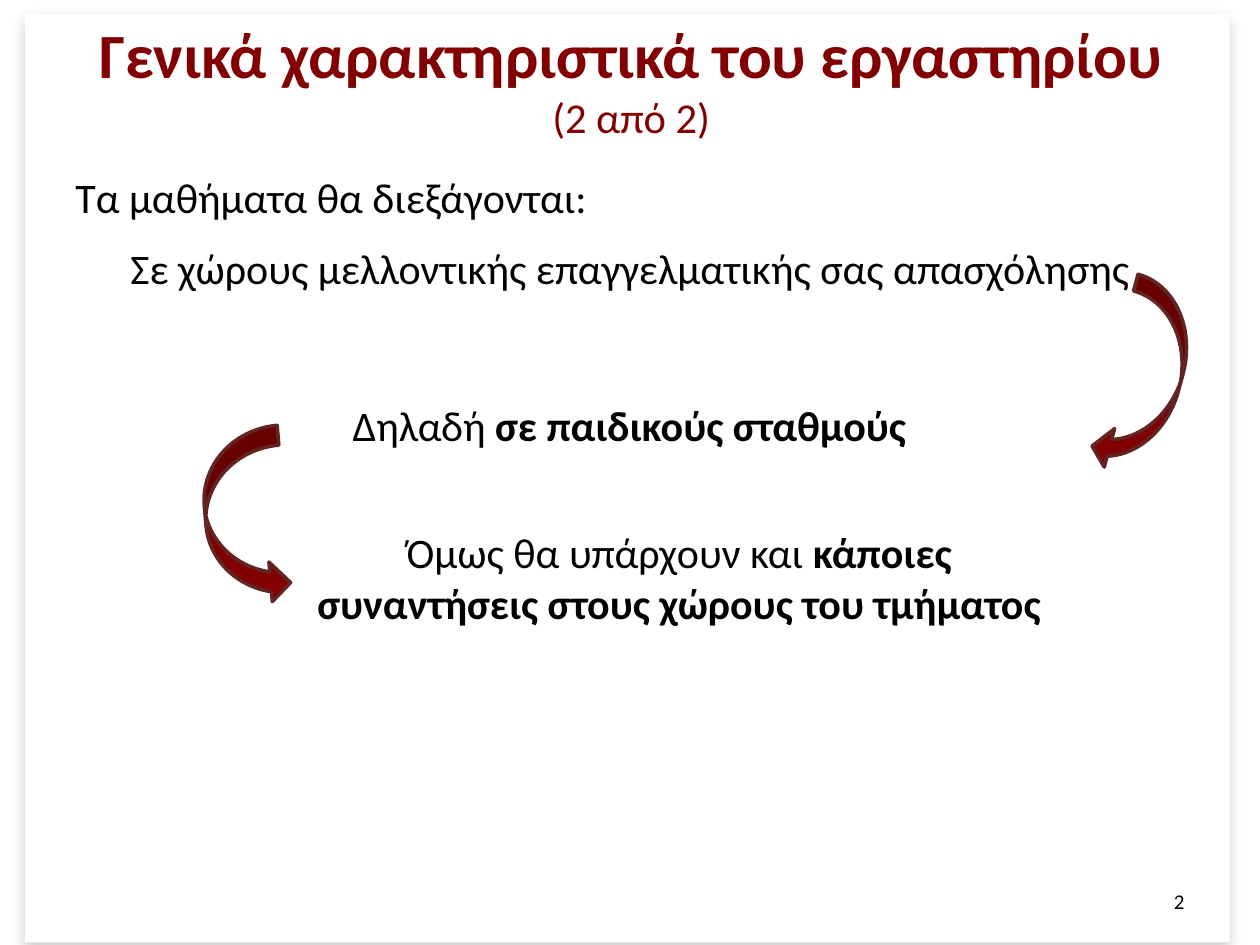
from dataclasses import dataclass

from lxml.etree import SubElement
from pptx import Presentation
from pptx.dml.color import RGBColor
from pptx.enum.shapes import MSO_SHAPE
from pptx.enum.text import MSO_ANCHOR, PP_ALIGN
from pptx.oxml.ns import qn
from pptx.util import Pt


@dataclass(frozen=True)
class Theme:
    font: str = "Calibri"
    paper: str = "FFFFFF"
    ink: str = "000000"
    accent: str = "820000"
    outline: str = "632523"
    title: float = 36
    body: float = 24
    subtitle: float = 24.3
    number: float = 12


def add_run(p, text, font, size, color, bold=False):
    r = p.add_run()
    r.text = text
    r.font.name = font
    r.font.size = Pt(size)
    r.font.bold = bold
    r.font.color.rgb = RGBColor.from_string(color)


class Deck:
    def __init__(self, prs, theme):
        self.theme = theme
        self.slide = prs.slides.add_slide(prs.slide_layouts[6])

    def shape(self, kind, box, fill):
        sp = self.slide.shapes.add_shape(kind, *map(Pt, box))
        sp.shadow.inherit = False
        sp.fill.solid()
        sp.fill.fore_color.rgb = RGBColor.from_string(fill)
        return sp

    def panel(self, box):
        sp = self.shape(MSO_SHAPE.RECTANGLE, box, self.theme.paper)
        sp.line.fill.background()
        effects = sp._element.spPr.find(qn("a:effectLst"))
        shadow = SubElement(effects, qn("a:outerShdw"), blurRad=str(Pt(8)),
                            dist=str(Pt(4)), dir="5400000", rotWithShape="0")
        color = SubElement(shadow, qn("a:srgbClr"), val=self.theme.ink)
        SubElement(color, qn("a:alpha"), val="20000")

    def arrow(self, kind, box, rotation, bend=0.5):
        sp = self.shape(kind, box, self.theme.accent)
        sp.rotation = rotation
        sp.adjustments[1] = bend
        sp.line.color.rgb = RGBColor.from_string(self.theme.outline)
        sp.line.width = Pt(2)

    def text(self, box, paragraphs, size=None, color=None, anchor=MSO_ANCHOR.TOP,
             wrap=True, space=0):
        tf = self.slide.shapes.add_textbox(*map(Pt, box)).text_frame
        tf.word_wrap = wrap
        tf.vertical_anchor = anchor
        for i, (align, runs) in enumerate(paragraphs):
            p = tf.paragraphs[0] if i == 0 else tf.add_paragraph()
            p.alignment = align
            p.space_before = Pt(space)
            for text, style in runs:
                base = {"size": size or self.theme.body, "color": color or self.theme.ink}
                add_run(p, text, self.theme.font, **(base | style))


def main():
    prs = Presentation()
    prs.slide_width, prs.slide_height = Pt(720), Pt(540)
    theme = Theme()
    deck = Deck(prs, theme)
    bold = {"bold": True}
    left, center, right = PP_ALIGN.LEFT, PP_ALIGN.CENTER, PP_ALIGN.RIGHT

    deck.panel((14.4, 8, 688.3, 530.6))
    deck.text((36.7, 9.4, 648, 71.3),
              [(center, [("Γενικά χαρακτηριστικά του εργαστηρίου ", bold),
                         ("(2 από 2)", {"size": theme.subtitle})])],
              size=theme.title, color=theme.accent, anchor=MSO_ANCHOR.MIDDLE)
    deck.text((36, 94.3, 648, 96.5),
              [(left, [("Τα μαθήματα θα διεξάγονται:", {})]),
               (center, [("Σε χώρους μελλοντικής επαγγελματικής σας απασχόλησης", {})])],
              space=12)
    deck.arrow(MSO_SHAPE.CURVED_DOWN_ARROW, (598.3, 196.6, 113, 39.6), 105, bend=0.574)
    deck.text((193, 224.6, 333.4, 36),
              [(center, [("Δηλαδή ", {}), ("σε παιδικούς σταθμούς", bold)])],
              wrap=False)
    deck.arrow(MSO_SHAPE.CURVED_RIGHT_ARROW, (117.4, 244.8, 45.4, 101.5), 355.1)
    deck.text((172.8, 297.4, 430.6, 65.5),
              [(center, [("Όμως θα υπάρχουν και ", {}),
                         ("κάποιες συναντήσεις στους χώρους του τμήματος", bold)])])
    deck.text((516.2, 500.4, 167.8, 28.8), [(right, [("2", {})])],
              size=theme.number, anchor=MSO_ANCHOR.MIDDLE)

    prs.save("out.pptx")


if __name__ == "__main__":
    main()
